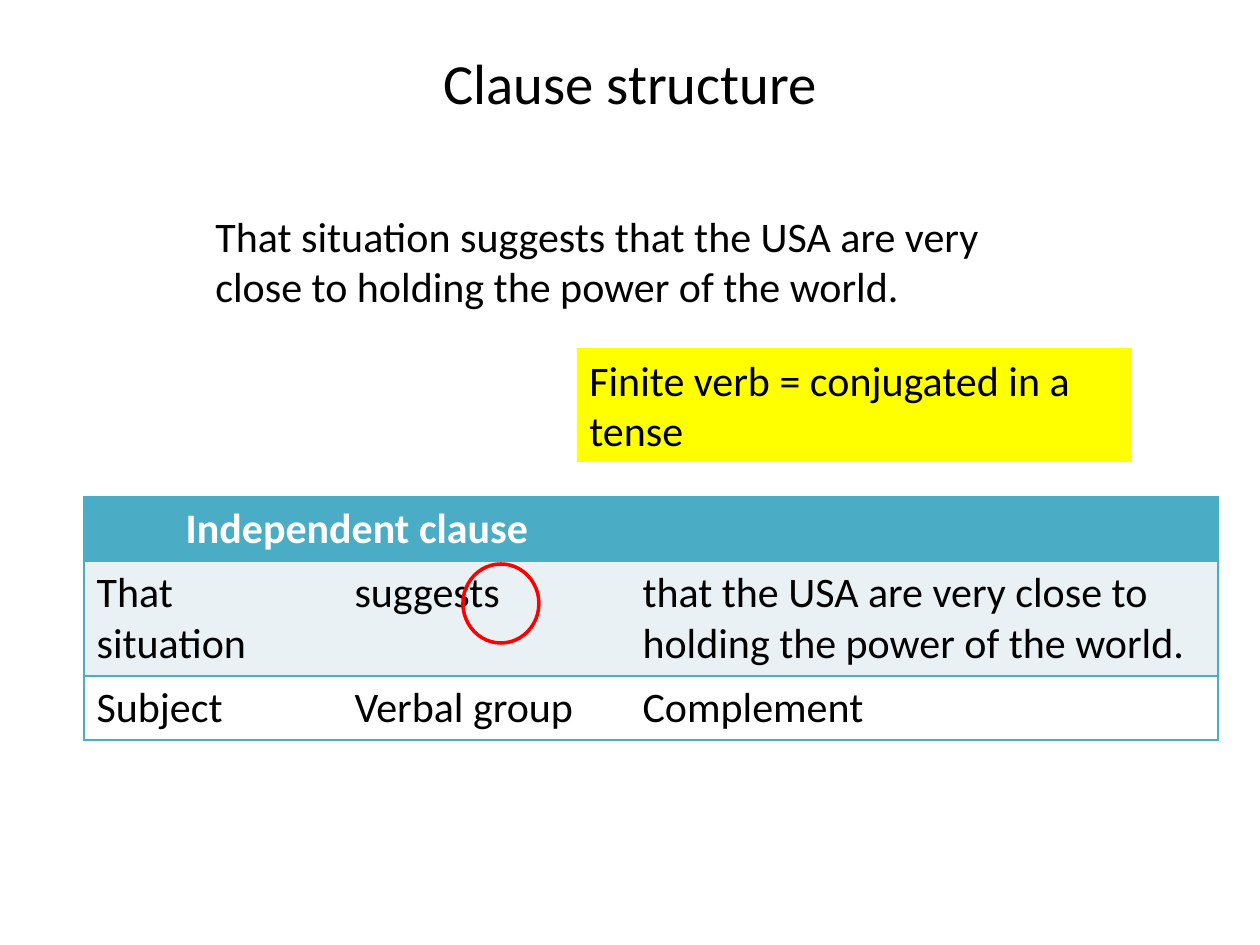
import pptx
import pptx.util
import pptx.dml.color
import pptx.enum.shapes
import pptx.enum.text
import pptx.oxml
import pptx.oxml.ns
from dataclasses import dataclass

# Content
TITLE = "Clause structure"
SENTENCE = ("That situation suggests that the USA are very "
            "close to holding the power of the world.")
VERB_NOTE = "Finite verb = conjugated in a tense"
CLAUSE_ROWS = [
    ("Independent clause", "", ""),
    ("That situation", "suggests",
     "that the USA are very close to holding the power of the world."),
    ("Subject", "Verbal group", "Complement"),
]

# Places in px: left, top, width, height
PX = pptx.util.Inches(1) // 126
SLIDE = (1260, 945)
TITLE_BOX = (63, 38, 1134, 87)
SENTENCE_BOX = (203, 204, 883, 115)
NOTE_BOX = (577, 348, 555, 114)
TABLE_AT = (84, 497)
COLUMNS = (258, 288, 588)
ROW_HEIGHT = 52
ENDING_RING = (463, 564, 76, 79)


@dataclass(frozen=True)
class Theme:
    font: str = "Calibri"
    title_size: float = 32.4
    body_size: float = 24
    text: str = "000000"
    header_text: str = "FFFFFF"
    accent: str = "4BACC6"
    row_fills: tuple = ("4BACC6", "E9F1F5", "FFFFFF")
    note_fill: str = "FFFF00"
    ring: str = "FF0000"


THEME = Theme()
PLAIN_TABLE_STYLE = "{2D5ABB26-0587-4C30-8999-92F81FD0307C}"


def emu(lengths):
    return [length * PX for length in lengths]


def rgb(value):
    return pptx.dml.color.RGBColor.from_string(value)


def write(frame, text, size=THEME.body_size, color=THEME.text, bold=False, centred=False):
    frame.text = text
    frame.word_wrap = True
    paragraph = frame.paragraphs[0]
    align = pptx.enum.text.PP_ALIGN
    paragraph.alignment = align.CENTER if centred else align.LEFT
    font = paragraph.font
    font.name, font.size, font.bold = THEME.font, pptx.util.Pt(size), bold
    font.color.rgb = rgb(color)


def add_borders(cell, sides):
    properties = cell._tc.get_or_add_tcPr()
    for side in sides:
        properties.append(pptx.oxml.parse_xml(
            f'<a:ln{side} {pptx.oxml.ns.nsdecls("a")} w="12700"><a:solidFill>'
            f'<a:srgbClr val="{THEME.accent}"/></a:solidFill></a:ln{side}>'))


def add_clause_table(slide):
    table = slide.shapes.add_table(
        len(CLAUSE_ROWS), len(COLUMNS),
        *emu((*TABLE_AT, sum(COLUMNS), ROW_HEIGHT * len(CLAUSE_ROWS)))).table
    table._tbl.tblPr.find(pptx.oxml.ns.qn("a:tableStyleId")).text = PLAIN_TABLE_STYLE
    for column, width in zip(table.columns, emu(COLUMNS)):
        column.width = width
    for r, row in enumerate(CLAUSE_ROWS):
        header = r == 0
        for c, text in enumerate(row):
            cell = table.cell(r, c)
            # Outer edges and row lines only
            outer = {0: ["L"], len(row) - 1: ["R"]}.get(c, [])
            add_borders(cell, outer + ["T", "B"])
            cell.fill.solid()
            cell.fill.fore_color.rgb = rgb(THEME.row_fills[r])
            write(cell.text_frame, text, bold=header, centred=header,
                  color=THEME.header_text if header else THEME.text)
    table.cell(0, 0).merge(table.cell(0, 1))
    table.cell(0, 0).vertical_anchor = pptx.enum.text.MSO_ANCHOR.MIDDLE


def main():
    deck = pptx.Presentation()
    deck.slide_width, deck.slide_height = emu(SLIDE)
    slide = deck.slides.add_slide(deck.slide_layouts[5])
    shapes = slide.shapes
    kinds = pptx.enum.shapes.MSO_SHAPE

    # Title
    title = shapes.title
    title.left, title.top, title.width, title.height = emu(TITLE_BOX)
    write(title.text_frame, TITLE, THEME.title_size, centred=True)
    title.text_frame.vertical_anchor = pptx.enum.text.MSO_ANCHOR.MIDDLE

    add_clause_table(slide)

    # Ring around the verb ending
    ring = shapes.add_shape(kinds.OVAL, *emu(ENDING_RING))
    ring.shadow.inherit = False
    ring.fill.background()
    ring.line.color.rgb = rgb(THEME.ring)
    ring.line.width = pptx.util.Pt(2)

    # Note on the finite verb
    note = shapes.add_shape(kinds.RECTANGLE, *emu(NOTE_BOX))
    note.shadow.inherit = False
    note.fill.solid()
    note.fill.fore_color.rgb = rgb(THEME.note_fill)
    note.line.fill.background()

    # Example sentence
    sentence = shapes.add_textbox(*emu(SENTENCE_BOX))

    for box, text in ((note, VERB_NOTE), (sentence, SENTENCE)):
        write(box.text_frame, text)
        box.text_frame.vertical_anchor = pptx.enum.text.MSO_ANCHOR.TOP
        box.text_frame.auto_size = pptx.enum.text.MSO_AUTO_SIZE.SHAPE_TO_FIT_TEXT

    deck.save("out.pptx")


if __name__ == "__main__":
    main()
